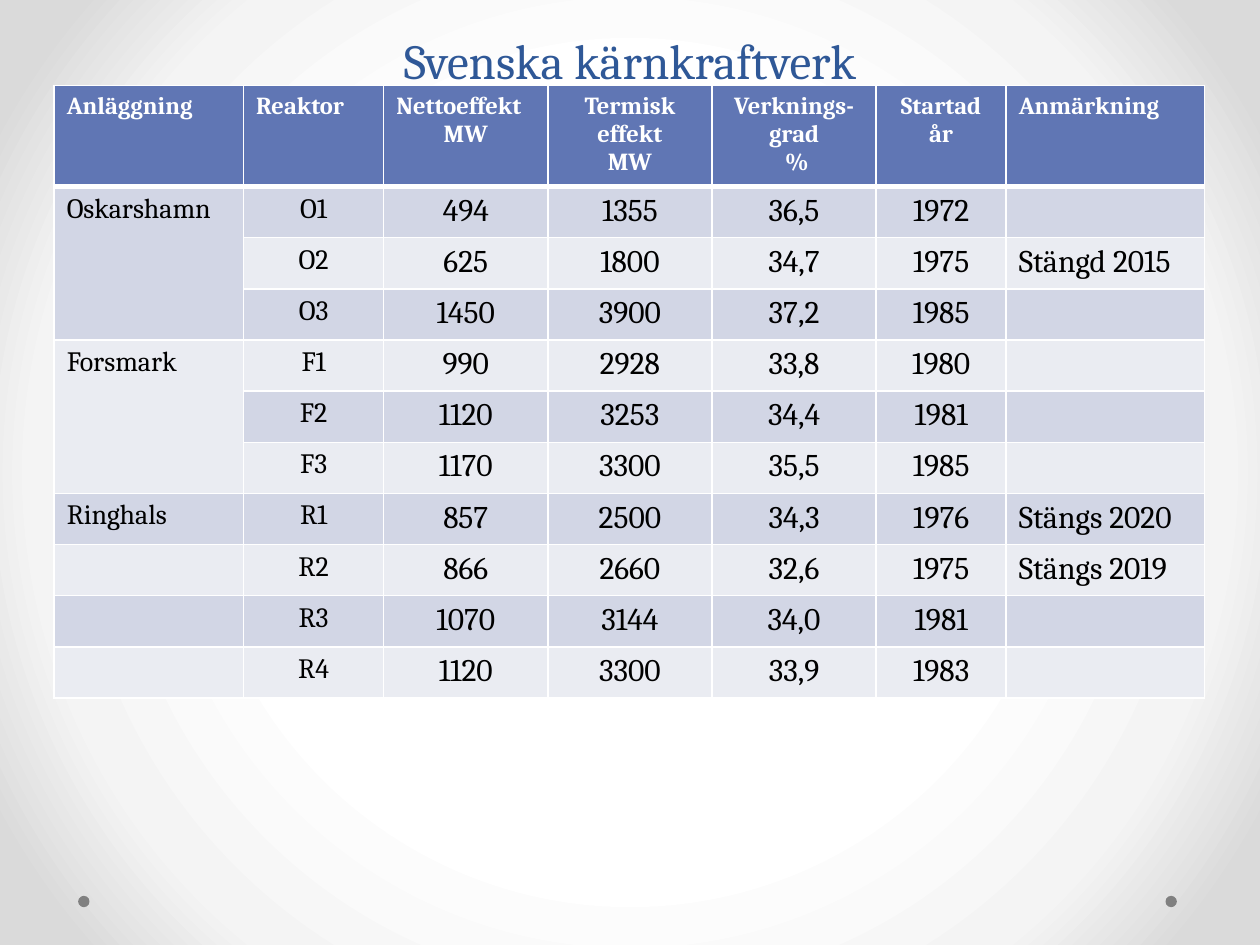
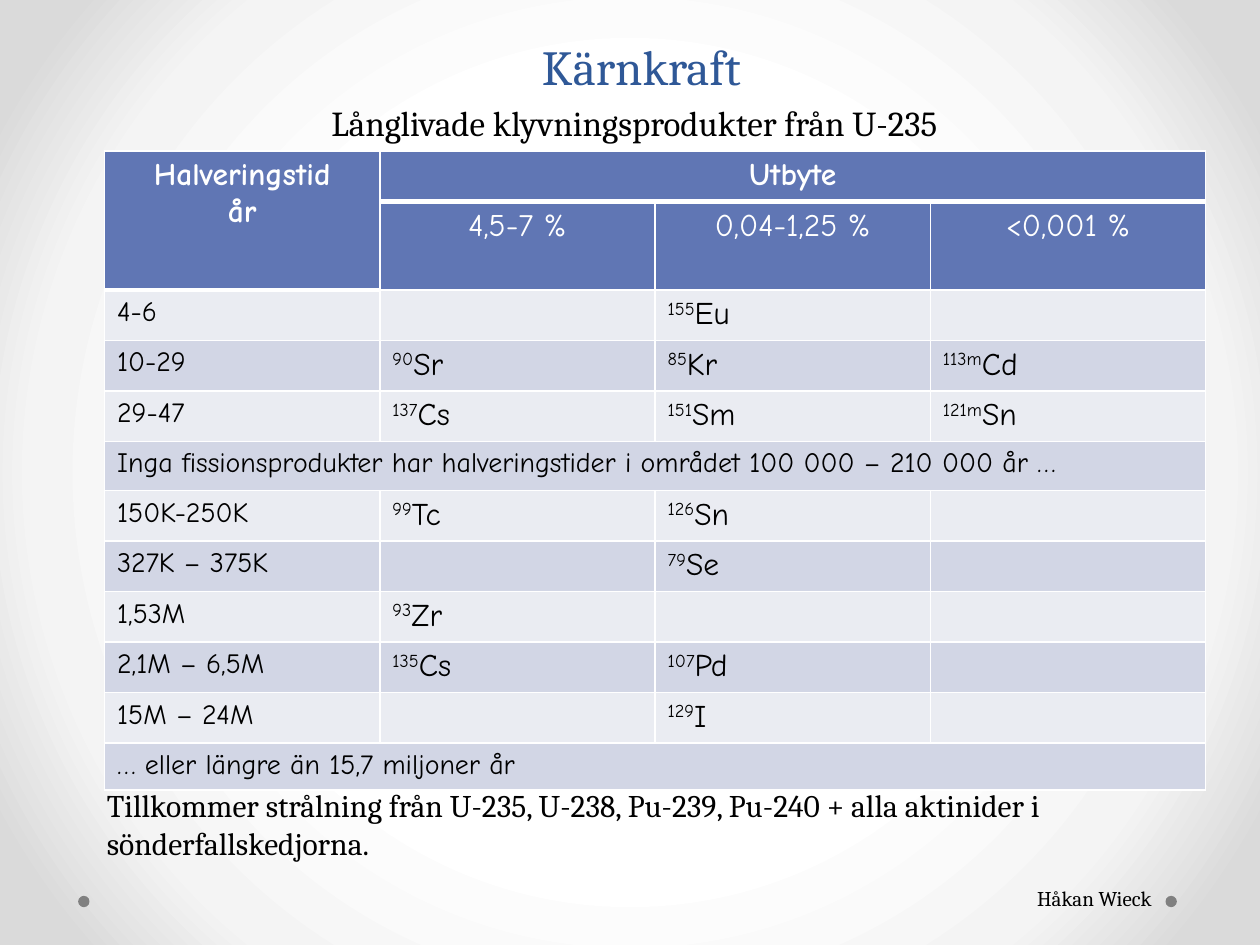
from dataclasses import dataclass

import lxml.etree
import pptx
import pptx.dml.color
import pptx.enum.shapes
import pptx.enum.text
import pptx.oxml.ns
import pptx.util

ALIGN = pptx.enum.text.PP_ALIGN
LEFT, CENTER, RIGHT = ALIGN.LEFT, ALIGN.CENTER, ALIGN.RIGHT
ANCHOR = pptx.enum.text.MSO_ANCHOR
Pt = pptx.util.Pt


@dataclass(frozen=True)
class Theme:
    title: str = "2F5897"
    header: str = "6076B4"
    band_dark: str = "D2D6E5"
    band_light: str = "EAECF2"
    white: str = "FFFFFF"
    black: str = "000000"
    dot: str = "808080"
    glow: tuple = ((50, "FFFFFF"), (76, "F4F4F4"), (92, "DADADA"))
    serif: str = "Cambria"
    hand: str = "Comic Neue"
    title_size: int = 28
    title_leading: int = 58
    subtitle_size: int = 20
    body_size: int = 18
    label_size: int = 16
    header_size: int = 14
    small_size: int = 12
    rule: int = 1
    header_rule: int = 3


T = Theme()


@dataclass(frozen=True)
class Box:
    """A region in grid units: the slide is 100 columns by 75 rows."""
    x: float
    y: float
    w: float
    h: float

    def emu(self):
        return [grid(n) for n in (self.x, self.y, self.w, self.h)]


def grid(n):
    return pptx.util.Inches(n / 10)


def rgb(value):
    return pptx.dml.color.RGBColor.from_string(value)


def sub(parent, tag, **attrs):
    return lxml.etree.SubElement(parent, pptx.oxml.ns.qn(tag), attrs)


def style_run(r, font, size, color, bold=False):
    r.font.name, r.font.size, r.font.bold = font, Pt(size), bold
    r.font.color.rgb = rgb(color)


# Parts shared by all slides
def paint_background(s):
    s.background.fill.gradient()
    grad = next(s.element.iter(pptx.oxml.ns.qn("a:gradFill")))
    for child in list(grad):
        grad.remove(child)
    stops = sub(grad, "a:gsLst")
    for pos, color in T.glow:
        sub(sub(stops, "a:gs", pos=str(pos * 1000)), "a:srgbClr", val=color)
    circle = sub(grad, "a:path", path="circle")
    sub(circle, "a:fillToRect", **dict.fromkeys("ltrb", "50000"))


def add_dots(s):
    for x in (92.5, 6.2):
        dot = s.shapes.add_shape(pptx.enum.shapes.MSO_SHAPE.OVAL,
                                 *Box(x, 71.1, 0.9, 0.9).emu())
        dot.shadow.inherit = False
        dot.fill.solid()
        dot.fill.fore_color.rgb = rgb(T.dot)
        dot.line.fill.background()


def add_text(s, box, text, size, color=T.black, align=LEFT, wrap=True):
    tf = s.shapes.add_textbox(*box.emu()).text_frame
    tf.word_wrap = wrap
    tf.text = text
    p = tf.paragraphs[0]
    p.alignment = align
    style_run(p.runs[0], T.serif, size, color)
    return tf


def new_slide(prs, title, title_box):
    s = prs.slides.add_slide(prs.slide_layouts[6])
    paint_background(s)
    add_dots(s)
    tf = add_text(s, title_box, title, T.title_size, T.title, CENTER)
    tf.vertical_anchor = ANCHOR.BOTTOM
    tf.paragraphs[0].line_spacing = Pt(T.title_leading)
    return s


# Tables
def rule_cell(cell, bottom):
    tc_pr = cell._tc.get_or_add_tcPr()
    for side in "LRTB":
        width = bottom if side == "B" else T.rule
        ln = sub(tc_pr, "a:ln" + side, w=str(Pt(width)))
        sub(sub(ln, "a:solidFill"), "a:srgbClr", val=T.white)


def fill_text(cell, text, align, **style):
    """Lines split at newlines; a mass number before | is raised."""
    cell.text_frame.text = text.replace("|", "")
    for p, line in zip(cell.text_frame.paragraphs, text.split("\n")):
        p.alignment = align
        mass, bar, symbol = line.partition("|")
        if bar:
            p.runs[0].text = mass
            p.runs[0]._r.get_or_add_rPr().set("baseline", "30000")
            p.add_run().text = symbol
        for r in p.runs:
            style_run(r, **style)


def add_table(s, box, rows, cols, heights, merges, header_rows, cell_style):
    """Column widths and row heights are weights that share the box."""
    table = s.shapes.add_table(len(rows), len(cols), *box.emu()).table
    table.first_row = table.horz_banding = False
    for col, weight in zip(table.columns, cols):
        col.width = grid(box.w * weight / sum(cols))
    for row, weight in zip(table.rows, heights):
        row.height = grid(box.h * weight / sum(heights))
    for i, row in enumerate(rows):
        band = T.band_dark if i % 2 else T.band_light
        for j in range(len(cols)):
            cell = table.cell(i, j)
            rule_cell(cell, T.rule if i else T.header_rule)
            cell.fill.solid()
            cell.fill.fore_color.rgb = rgb(T.header if i < header_rows else band)
            text = row[j] if j < len(row) else ""
            if text:
                color = T.white if i < header_rows else T.black
                fill_text(cell, text, color=color, bold=i == 0, **cell_style(i, j))
    for top, left, bottom, right in merges:
        table.cell(top, left).merge(table.cell(bottom, right))
    return table


# Slide 1: Swedish reactors
REACTORS = [
    ("Anläggning", "Reaktor", "Nettoeffekt\nMW", "Termisk effekt\nMW",
     "Verknings-grad\n %", "Startad\når", "Anmärkning"),
    ("Oskarshamn", "O1", "494", "1355", "36,5", "1972"),
    ("", "O2", "625", "1800", "34,7", "1975", "Stängd 2015"),
    ("", "O3", "1450", "3900", "37,2", "1985"),
    ("Forsmark", "F1", "990", "2928", "33,8", "1980"),
    ("", "F2", "1120", "3253", "34,4", "1981"),
    ("", "F3", "1170", "3300", "35,5", "1985"),
    ("Ringhals", "R1", "857", "2500", "34,3", "1976", "Stängs 2020"),
    ("", "R2", "866", "2660", "32,6", "1975", "Stängs 2019"),
    ("", "R3", "1070", "3144", "34,0", "1981"),
    ("", "R4", "1120", "3300", "33,9", "1983"),
]


def reactor_style(i, j):
    left_cols = (0, 1, 6) if i == 0 else (0, 6)
    size = T.header_size if i == 0 else T.label_size if j < 2 else T.body_size
    return dict(font=T.serif, size=size, align=LEFT if j in left_cols else CENTER)


def reactor_slide(prs):
    s = new_slide(prs, "Svenska kärnkraftverk", Box(5, 0, 90, 7.6))
    table = add_table(s, Box(4.3, 6.8, 91.3, 48.3), REACTORS,
                      cols=[1.5, 1.11, 1.3, 1.3, 1.3, 1.03, 1.57],
                      heights=[0.77] + [0.406] * 10,
                      merges=[(1, 0, 3, 0), (4, 0, 6, 0)],
                      header_rows=1, cell_style=reactor_style)
    table.cell(0, 2).text_frame.paragraphs[0].alignment = LEFT


# Slide 2: long-lived fission products
PRODUCTS = [
    ("Halveringstid\når", "Utbyte"),
    ("", "4,5-7 %", "0,04-1,25 %", "<0,001 %"),
    ("4-6", "", "155|Eu"),
    ("10-29", "90|Sr", "85|Kr", "113m|Cd"),
    ("29-47", "137|Cs", "151|Sm", "121m|Sn"),
    ("Inga fissionsprodukter har halveringstider i området 100 000 – 210 000 år …",),
    ("150K-250K", "99|Tc", "126|Sn"),
    ("327K – 375K", "", "79|Se"),
    ("1,53M", "93|Zr"),
    ("2,1M – 6,5M", "135|Cs", "107|Pd"),
    ("15M – 24M", "", "129|I"),
    ("… eller längre än 15,7 miljoner år",),
]


def product_style(i, j):
    size = T.label_size if i > 1 and j == 0 else T.body_size
    return dict(font=T.hand, size=size, align=CENTER if i < 2 else LEFT)


def product_slide(prs):
    s = new_slide(prs, "Kärnkraft", Box(5.9, 2.1, 90, 6))
    add_text(s, Box(16.9, 7.6, 66.9, 4.4), "Långlivade klyvningsprodukter från U-235",
             T.subtitle_size, align=CENTER)
    add_table(s, Box(8.3, 12, 87.4, 50.6), PRODUCTS, cols=[1] * 4,
              heights=[0.4, 0.69] + [0.4] * 3 + [0.39] + [0.4] * 5 + [0.37],
              merges=[(0, 0, 1, 0), (0, 1, 0, 3), (5, 0, 5, 3), (11, 0, 11, 3)],
              header_rows=2, cell_style=product_style)
    add_text(s, Box(7.5, 61.9, 88.2, 7.1),
             "Tillkommer strålning från U-235, U-238, Pu-239, Pu-240 + alla aktinider"
             " i sönderfallskedjorna.", T.body_size)
    add_text(s, Box(80.3, 69.8, 12.1, 3), "Håkan Wieck", T.small_size,
             align=RIGHT, wrap=False)


def main():
    prs = pptx.Presentation()
    prs.slide_width, prs.slide_height = grid(100), grid(75)
    reactor_slide(prs)
    product_slide(prs)
    prs.save("out.pptx")


if __name__ == "__main__":
    main()
